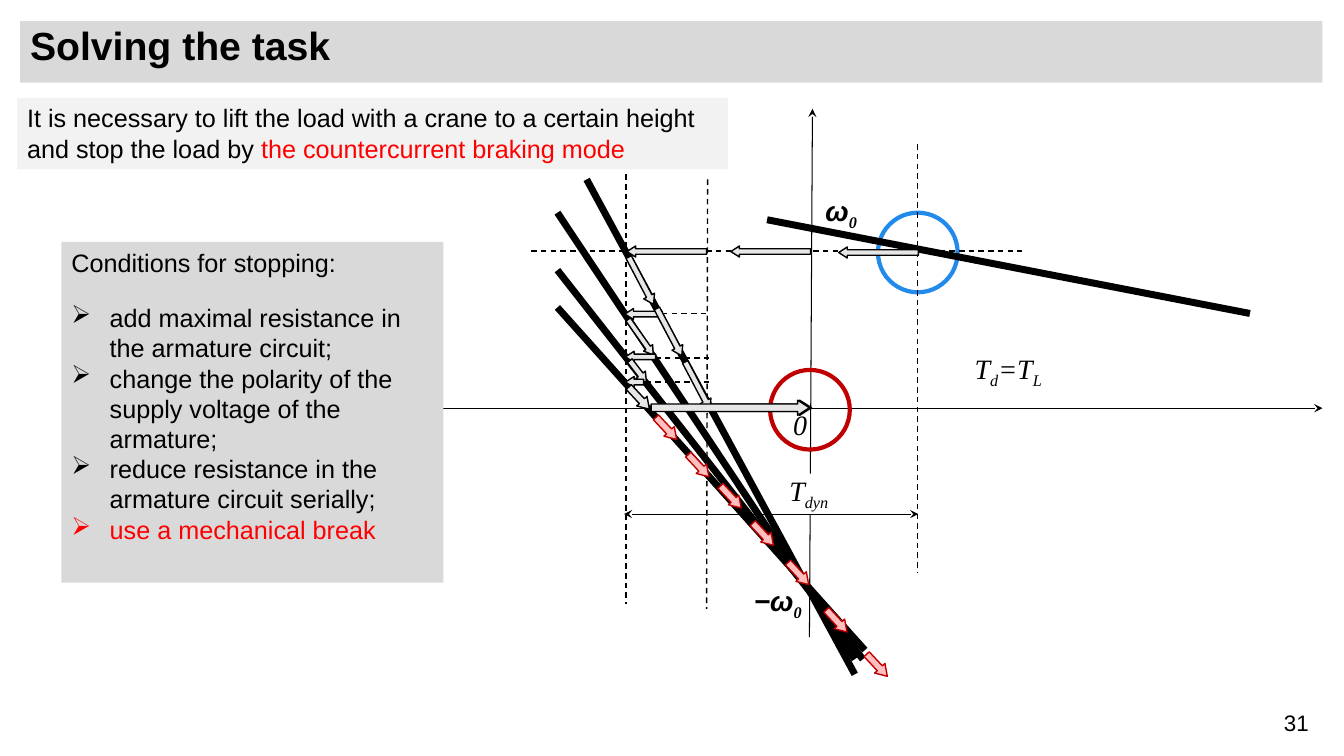
from typing import NamedTuple

from lxml.etree import SubElement
from pptx import Presentation
from pptx.dml.color import RGBColor
from pptx.enum.dml import MSO_LINE
from pptx.enum.shapes import MSO_CONNECTOR, MSO_SHAPE
from pptx.enum.text import MSO_ANCHOR, PP_ALIGN
from pptx.oxml.ns import qn
from pptx.util import Inches, Pt

CELL = 0.1  # inches; the slide is 133.3 columns by 75 rows
BLACK, RED, WHITE = "000000", "FF0000", "FFFFFF"
PANEL, ARROW_GREY = "D9D9D9", "E7E6E6"
DARK_RED, PINK, BLUE = "C00000", "FFBFBF", "228AEB"
SERIF = "Times New Roman"


class Line(NamedTuple):
    col1: float
    row1: float
    col2: float
    row2: float


class Box(NamedTuple):
    col: float
    row: float
    cols: float
    rows: float


class Arrow(NamedTuple):
    box: Box
    turn: float


AXES = [(Line(80.6, 10.8, 80.3, 63.2), ["headEnd"]),
        (Line(40.5, 40.5, 131.2, 40.5), ["headEnd", "tailEnd"])]
TORQUE_SPAN = Line(61.9, 51, 91.1, 51)
GUIDES = [
    Line(52.7, 24.9, 101.4, 24.9),
    Line(70.2, 17.8, 70.1, 60.4),
    Line(62.1, 17.3, 62.1, 59.9),
    Line(61.8, 31.1, 70.1, 31.1),
    Line(62.1, 35.5, 70.3, 35.5),
    Line(62.1, 37.9, 70.4, 37.9),
    Line(91, 14.3, 91, 56.8),
]
CHARACTERISTICS = [
    Line(58.2, 17.8, 84.8, 66.9),
    Line(76.1, 21.8, 124, 31.1),
    Line(55.3, 21.1, 84.8, 65.4),
    Line(55.3, 26.8, 85.6, 65.4),
    Line(55.3, 30.5, 85.8, 64.5),
]
BRAKING_STEPS = [
    Arrow(Box(86.6, 21.1, 1.1, 7.9), 270),
    Arrow(Box(75.9, 21, 1.1, 7.9), 270),
    Arrow(Box(65.6, 21, 1.1, 7.9), 270),
    Arrow(Box(63, 25.2, 1.2, 5.3), 152.3),
    Arrow(Box(63.3, 29.3, 1.1, 3.7), 270),
    Arrow(Box(63, 31.3, 1.1, 4.3), 144.8),
    Arrow(Box(63, 33.9, 1.1, 3), 270),
    Arrow(Box(62.7, 35.5, 1.2, 2.7), 142.4),
    Arrow(Box(62.4, 37, 1.1, 1.8), 270),
    Arrow(Box(62.7, 38, 1.4, 3), 137),
    Arrow(Box(65.8, 30.3, 1.2, 5.3), 152.3),
    Arrow(Box(68.6, 35.6, 1.2, 5.3), 152.3),
    Arrow(Box(74.8, 35.5, 1.5, 9.9), 90),
    Arrow(Box(71.7, 32.6, 1.5, 15.7), 90),
]
LOWERING_STEPS = [(65.4, 41), (68.6, 44.7), (71.8, 47.8), (75, 51.5),
                  (78.5, 55.4), (82.3, 60.1), (86.3, 64.5)]
CONDITIONS = [
    ("add maximal resistance in the armature circuit;", BLACK),
    ("change the polarity of the supply voltage of the armature;", BLACK),
    ("reduce resistance in the armature circuit serially;", BLACK),
    ("use a mechanical break", RED),
]


def grid(cells: float) -> int:
    return Inches(cells * CELL)


def rgb(color: str) -> RGBColor:
    return RGBColor.from_string(color)


def add_line(line: Line, width: float = 1, dashed: bool = False, ends=()) -> None:
    """Draw a black line; ends lists the XML line ends that get an arrowhead."""
    sp = s.shapes.add_connector(MSO_CONNECTOR.STRAIGHT, *map(grid, line))
    sp.line.color.rgb = rgb(BLACK)
    sp.line.width = Pt(width)
    if dashed:
        sp.line.dash_style = MSO_LINE.DASH
    for end in ends:
        SubElement(sp.line._ln, qn(f"a:{end}"), type="stealth")
    SubElement(sp._element.spPr, qn("a:effectLst"))


def add_shape(kind: MSO_SHAPE, box: Box, fill: str = "", line: str = "", width: float = 1):
    sp = s.shapes.add_shape(kind, *map(grid, box))
    sp.shadow.inherit = False
    if fill:
        sp.fill.solid()
        sp.fill.fore_color.rgb = rgb(fill)
    else:
        sp.fill.background()
    if line:
        sp.line.color.rgb = rgb(line)
        sp.line.width = Pt(width)
    else:
        sp.line.fill.background()
    return sp


def add_arrow(arrow: Arrow, fill: str, line: str) -> None:
    sp = add_shape(MSO_SHAPE.UP_ARROW, arrow.box, fill, line)
    sp.adjustments[0], sp.adjustments[1] = 0.5, 0.78
    sp.rotation = arrow.turn


def text_frame(box: Box, fill: str = "", inset: bool = True):
    """Return the wrapped, top-left text frame of a panel or a plain text box."""
    if fill:
        sp = add_shape(MSO_SHAPE.RECTANGLE, box, fill)
    else:
        sp = s.shapes.add_textbox(*map(grid, box))
    tf = sp.text_frame
    tf.word_wrap = True
    tf.vertical_anchor = MSO_ANCHOR.TOP
    tf.paragraphs[0].alignment = PP_ALIGN.LEFT
    if not inset:
        tf.margin_left = tf.margin_right = tf.margin_top = tf.margin_bottom = 0
    return tf


def write(p, text: str, size: float = 18, font: str = "Arial", color: str = BLACK,
          bold: bool = False, italic: bool = False, sub: bool = False) -> None:
    r = p.add_run()
    r.text = text
    r.font.size, r.font.name = Pt(size), font
    r.font.bold, r.font.italic = bold, italic
    r.font.color.rgb = rgb(color)
    if sub:
        r._r.get_or_add_rPr().set("baseline", "-25000")


def add_symbol(box: Box, *parts: str, fill: str = "", inset: bool = True) -> None:
    """Write an italic symbol whose every second part is a subscript."""
    p = text_frame(box, fill, inset).paragraphs[0]
    for i, part in enumerate(parts):
        write(p, part, size=20, font=SERIF, italic=True, sub=i % 2 == 1)


def add_speed(box: Box, symbol: str) -> None:
    p = text_frame(box).paragraphs[0]
    p.line_spacing = 1.15
    write(p, symbol, size=20, bold=True, italic=True)
    write(p, "0", size=20, font=SERIF, bold=True, italic=True, sub=True)


def add_bullet(tf, text: str, color: str) -> None:
    p = tf.add_paragraph()
    p.alignment = PP_ALIGN.LEFT
    pPr = p._p.get_or_add_pPr()
    pPr.set("marL", str(grid(3.8)))
    pPr.set("indent", str(-grid(3.8)))
    SubElement(pPr, qn("a:buChar"), char="➢")
    write(p, text, color=color)


prs = Presentation()
prs.slide_width, prs.slide_height = grid(133.33), grid(75)
s = prs.slides.add_slide(prs.slide_layouts[6])

p = text_frame(Box(125.4, 69.9, 6.4, 3.7)).paragraphs[0]
p.alignment = PP_ALIGN.CENTER
write(p, "31", size=16)

p = text_frame(Box(2, 2.1, 129.2, 6.1), PANEL).paragraphs[0]
p.line_spacing = 0.9
write(p, "Solving the task", size=28, bold=True)

for axis, ends in AXES:
    add_line(axis, 0.75, ends=ends)
add_symbol(Box(77.7, 39.9, 4.5, 5.3), "0")
add_shape(MSO_SHAPE.OVAL, Box(87.1, 21.1, 7.9, 7.9), line=BLUE, width=3)
for guide in GUIDES:
    add_line(guide, dashed=True)
for characteristic in CHARACTERISTICS:
    add_line(characteristic, 5)

p = text_frame(Box(1.7, 9.7, 70.5, 7.1), "F2F2F2").paragraphs[0]
write(p, "It is necessary to lift the load with a crane to a certain height and stop the load by ")
write(p, "the countercurrent braking mode", color=RED)

add_symbol(Box(95.7, 34.4, 12.4, 5.3), "T", "d", "=T", "L")
add_symbol(Box(78.3, 47, 6.1, 4), "T", "dyn", fill=WHITE, inset=False)
add_line(TORQUE_SPAN, 0.75, ends=["headEnd", "tailEnd"])
add_speed(Box(80.9, 18.1, 8.1, 6.3), "ω")
add_speed(Box(73.8, 56.8, 8.1, 6.3), "−ω")
add_shape(MSO_SHAPE.OVAL, Box(76.4, 36.7, 7.9, 7.9), line=DARK_RED, width=3)

tf = text_frame(Box(6.1, 24, 37.9, 33.8), PANEL)
write(tf.paragraphs[0], "Conditions for stopping:")
tf.paragraphs[0].space_after = Pt(18)
for condition, color in CONDITIONS:
    add_bullet(tf, condition, color)

for step in BRAKING_STEPS:
    add_arrow(step, ARROW_GREY, BLACK)
for col, row in LOWERING_STEPS:
    add_arrow(Arrow(Box(col, row, 1.4, 3), 137), PINK, DARK_RED)

prs.save("out.pptx")
